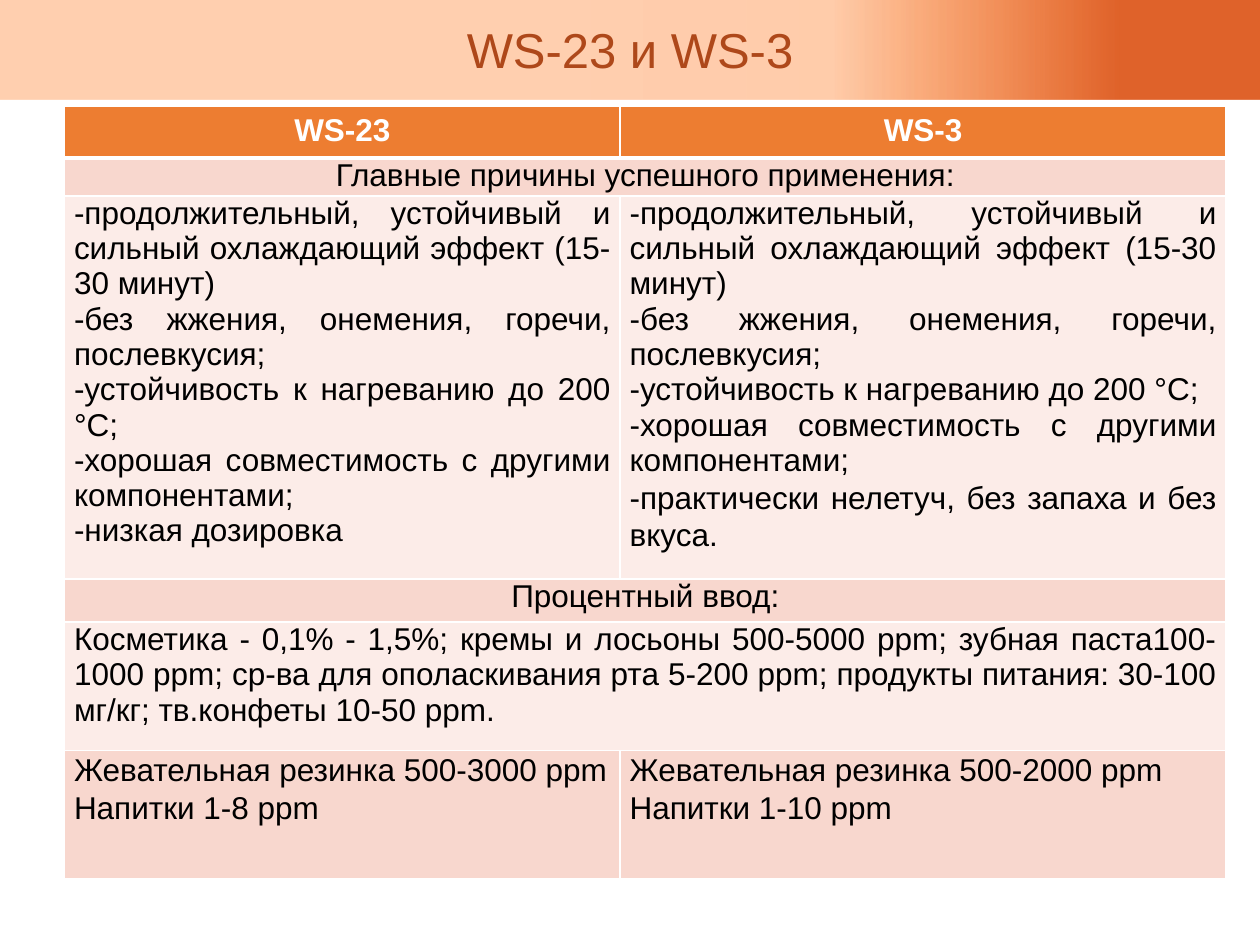
from dataclasses import dataclass

from lxml import etree
from pptx import Presentation
from pptx.dml.color import RGBColor
from pptx.enum import shapes, text
from pptx.oxml import ns
from pptx.util import Pt


@dataclass(frozen=True)
class Theme:
    font: str = "Arial"
    title_size: float = 28
    body_size: float = 18
    title: str = "AE481A"
    white: str = "FFFFFF"
    black: str = "000000"
    header: str = "ED7D31"
    band: str = "F8D7CE"
    pale: str = "FCECE8"
    gradient: tuple = ((45, "FF6600", 31), (66, "FF6600", 33), (89, "DF622A", 100))


THEME = Theme()
ALIGN = text.PP_ALIGN
COMMON = [
    "-продолжительный, устойчивый и сильный охлаждающий эффект (15-30 минут)",
    "-без жжения, онемения, горечи, послевкусия;",
    "-устойчивость к нагреванию до 200 °С;",
    "-хорошая совместимость с другими компонентами;",
]
DOSAGE = (
    "Косметика - 0,1% - 1,5%; кремы и лосьоны 500-5000 ppm; зубная паста100-1000 ppm; "
    "ср-ва для ополаскивания рта 5-200 ppm; продукты питания: 30-100 мг/кг; "
    "тв.конфеты 10-50 ppm."
)
COLUMNS = (317.5, 346.3)
ROWS = [
    (29.5, THEME.header, ALIGN.CENTER, [["WS-23"], ["WS-3"]]),
    (21.6, THEME.band, ALIGN.CENTER, [["Главные причины успешного применения:"]]),
    (205, THEME.pale, ALIGN.JUSTIFY, [
        COMMON + ["-низкая дозировка"],
        COMMON + ["-практически нелетуч, без запаха и без вкуса."],
    ]),
    (24.5, THEME.band, ALIGN.CENTER, [["Процентный ввод:"]]),
    (73.4, THEME.pale, ALIGN.JUSTIFY, [[DOSAGE]]),
    (73.4, THEME.band, ALIGN.JUSTIFY, [
        ["Жевательная резинка 500-3000 ppm", "Напитки 1-8 ppm"],
        ["Жевательная резинка 500-2000 ppm", "Напитки 1-10 ppm"],
    ]),
]
LOOSE_STARTS = ("-практически", "Жевательная", "Напитки")


def sub(parent, tag, **attrs):
    return etree.SubElement(parent, ns.qn(tag), {k: str(v) for k, v in attrs.items()})


def style(p, align, size, color, bold=False):
    p.alignment = align
    for r in p.runs:
        r.font.name = THEME.font
        r.font.size = Pt(size)
        r.font.bold = bold
        r.font.color.rgb = RGBColor.from_string(color)


def set_borders(cell, top=1, bottom=1):
    tc_pr = cell._tc.get_or_add_tcPr()
    widths = {"a:lnL": 1, "a:lnR": 1, "a:lnT": top, "a:lnB": bottom}
    for i, (tag, width) in enumerate(widths.items()):
        ln = sub(tc_pr, tag, w=Pt(width))
        sub(sub(ln, "a:solidFill"), "a:srgbClr", val=THEME.white)
        tc_pr.insert(i, ln)


def add_banner(s, x, y, w, h):
    sp = s.shapes.add_shape(shapes.MSO_SHAPE.RECTANGLE, Pt(x), Pt(y), Pt(w), Pt(h))
    sp.shadow.inherit = False
    sp.line.fill.background()
    sp.fill.gradient()
    sp.fill.gradient_angle = 0
    stops = sp._element.spPr.find(ns.qn("a:gradFill")).find(ns.qn("a:gsLst"))
    for stop in list(stops):
        stops.remove(stop)
    for pos, color, alpha in THEME.gradient:
        clr = sub(sub(stops, "a:gs", pos=pos * 1000), "a:srgbClr", val=color)
        if alpha < 100:
            sub(clr, "a:alpha", val=alpha * 1000)


def add_title(s, x, y, w, h):
    tf = s.shapes.add_textbox(Pt(x), Pt(y), Pt(w), Pt(h)).text_frame
    tf.word_wrap = True
    tf.vertical_anchor = text.MSO_ANCHOR.MIDDLE
    tf.text = "WS-23 и WS-3"
    p = tf.paragraphs[0]
    p.line_spacing = 0.9
    style(p, ALIGN.CENTER, THEME.title_size, THEME.title)


def fill_cell(cell, lines, align, is_header):
    if not is_header:
        cell.margin_left = cell.margin_right = Pt(5.4)
        cell.margin_top = cell.margin_bottom = 0
    tf = cell.text_frame
    tf.text = "\n".join(lines)
    for p in tf.paragraphs:
        if p.text.startswith(LOOSE_STARTS):
            p.line_spacing = 1.07
        style(p, align, THEME.body_size, THEME.white if is_header else THEME.black, is_header)


def add_comparison(s, x, y, w):
    h = sum(row[0] for row in ROWS)
    table = s.shapes.add_table(len(ROWS), len(COLUMNS), Pt(x), Pt(y), Pt(w), Pt(h)).table
    for column, width in zip(table.columns, COLUMNS):
        column.width = Pt(width)
    for i, (height, color, align, contents) in enumerate(ROWS):
        table.rows[i].height = Pt(height)
        for j in range(len(COLUMNS)):
            cell = table.cell(i, j)
            cell.fill.solid()
            cell.fill.fore_color.rgb = RGBColor.from_string(color)
            set_borders(cell, top=3 if i == 1 else 1, bottom=3 if i == 0 else 1)
        if len(contents) == 1:
            table.cell(i, 0).merge(table.cell(i, len(COLUMNS) - 1))
        for j, lines in enumerate(contents):
            fill_cell(table.cell(i, j), lines, align, i == 0)


def main():
    prs = Presentation()
    prs.slide_width, prs.slide_height = Pt(720), Pt(540)
    s = prs.slides.add_slide(prs.slide_layouts[6])
    add_banner(s, 0, 0, 720, 56.9)
    add_title(s, 49.7, 0, 620.6, 60.5)
    add_comparison(s, 36.9, 60.8, sum(COLUMNS))
    prs.save("out.pptx")


if __name__ == "__main__":
    main()
